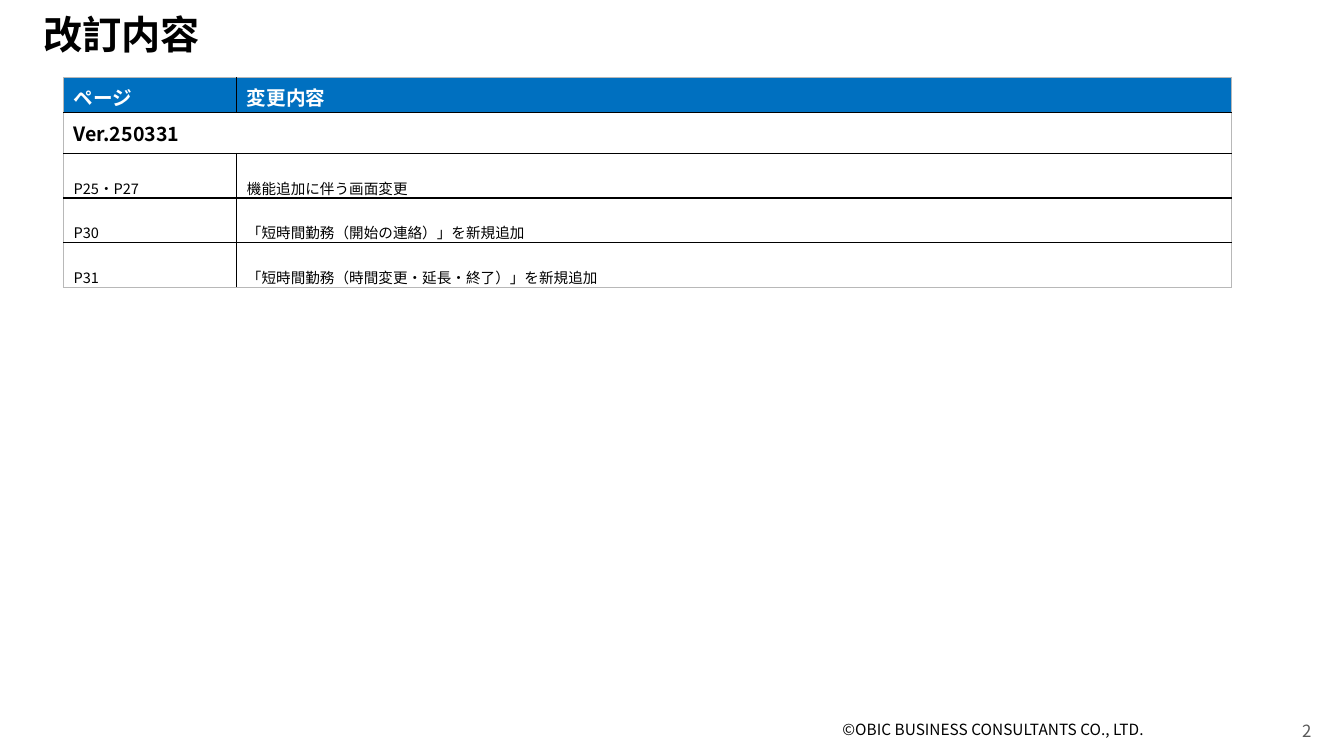
from lxml.etree import SubElement
from pptx import Presentation
from pptx.dml.color import RGBColor
from pptx.enum.text import MSO_ANCHOR, PP_ALIGN
from pptx.oxml.ns import qn
from pptx.util import Cm, Pt

FONT = "Noto Sans CJK JP"
COLORS = {
    "black": "000000",
    "white": "FFFFFF",
    "header": "0070C0",
    "number": "595959",
    "frame": "B8B8B8",
}
HEADINGS = ("ページ", "変更内容")
VERSION = "Ver.250331"
CHANGES = [
    ("P25・P27", "機能追加に伴う画面変更"),
    ("P30", "「短時間勤務（開始の連絡）」を新規追加"),
    ("P31", "「短時間勤務（時間変更・延長・終了）」を新規追加"),
]


def color(name):
    return RGBColor.from_string(COLORS[name])


def write(text_frame, text, size, color_name, bold=False, lowered=False):
    text_frame.text = text
    para = text_frame.paragraphs[0]
    for span in para.runs:
        span.font.size = Pt(size)
        span.font.bold = bold
        span.font.color.rgb = color(color_name)
        span.font.name = FONT
        properties = span._r.get_or_add_rPr()
        SubElement(properties, qn("a:ea"), typeface=FONT)
        if lowered:
            properties.set("baseline", "-25000")
    return para


def add_text(page, box, text, size, color_name, bold=False):
    shape = page.shapes.add_textbox(*(Cm(length) for length in box))
    shape.text_frame.word_wrap = True
    return write(shape.text_frame, text, size, color_name, bold)


def add_border(cell, side, outer):
    width, name = (Pt(0.5), "frame") if outer else (Pt(1), "black")
    line = SubElement(cell._tc.get_or_add_tcPr(), qn(f"a:ln{side}"), w=str(width))
    fill = SubElement(line, qn("a:solidFill"))
    SubElement(fill, qn("a:srgbClr"), val=COLORS[name])


def style_cell(cell, row, column, last_row):
    merged = row == 1
    add_border(cell, "L", column == 0 or merged)
    add_border(cell, "R", column == 1 or merged)
    add_border(cell, "T", row == 0)
    add_border(cell, "B", row == last_row)
    if row == 0:
        cell.fill.solid()
        cell.fill.fore_color.rgb = color("header")
    else:
        cell.fill.background()
    cell.vertical_anchor = MSO_ANCHOR.MIDDLE


def add_changes(page, box):
    left, top, width, height = box
    rows = [HEADINGS, (VERSION, ""), *CHANGES]
    frame = page.shapes.add_table(
        len(rows), 2, Cm(left), Cm(top), Cm(width), Cm(height)
    )
    table = frame.table
    table.first_row = False
    table.horz_banding = False
    page_width = 4.37
    table.columns[0].width = Cm(page_width)
    table.columns[1].width = Cm(width - page_width)
    header_height = 0.87
    table.rows[0].height = Cm(header_height)
    for row in range(1, len(rows)):
        table.rows[row].height = Cm((height - header_height) / len(CHANGES + [VERSION]))
    table.cell(1, 0).merge(table.cell(1, 1))
    for row, texts in enumerate(rows):
        for column, text in enumerate(texts):
            cell = table.cell(row, column)
            style_cell(cell, row, column, len(rows) - 1)
            if text:
                heading = row < 2
                write(
                    cell.text_frame,
                    text,
                    14 if heading else 18,
                    "white" if row == 0 else "black",
                    bold=heading,
                    lowered=not heading,
                )


def add_title(page, box):
    para = add_text(page, box, "改訂内容", 28, "black", bold=True)
    para.line_spacing = 0.9


def add_footer(page, box):
    left, top, width, height = box
    add_text(
        page,
        (left, top, 11.43, height),
        "©OBIC BUSINESS CONSULTANTS CO., LTD.",
        11,
        "black",
    )
    number_width = 7.62
    number_box = (left + width - number_width, top, number_width, height)
    number = add_text(page, number_box, "2", 12, "number")
    number.alignment = PP_ALIGN.RIGHT


def main():
    deck = Presentation()
    deck.slide_width = Cm(33.87)
    deck.slide_height = Cm(19.05)
    page = deck.slides.add_slide(deck.slide_layouts[6])
    add_footer(page, (20.98, 18.03, 12.32, 1.02))
    add_title(page, (0.84, 0.28, 31.88, 1.65))
    add_changes(page, (1.6, 1.96, 29.44, 5.03))
    deck.save("out.pptx")


if __name__ == "__main__":
    main()
